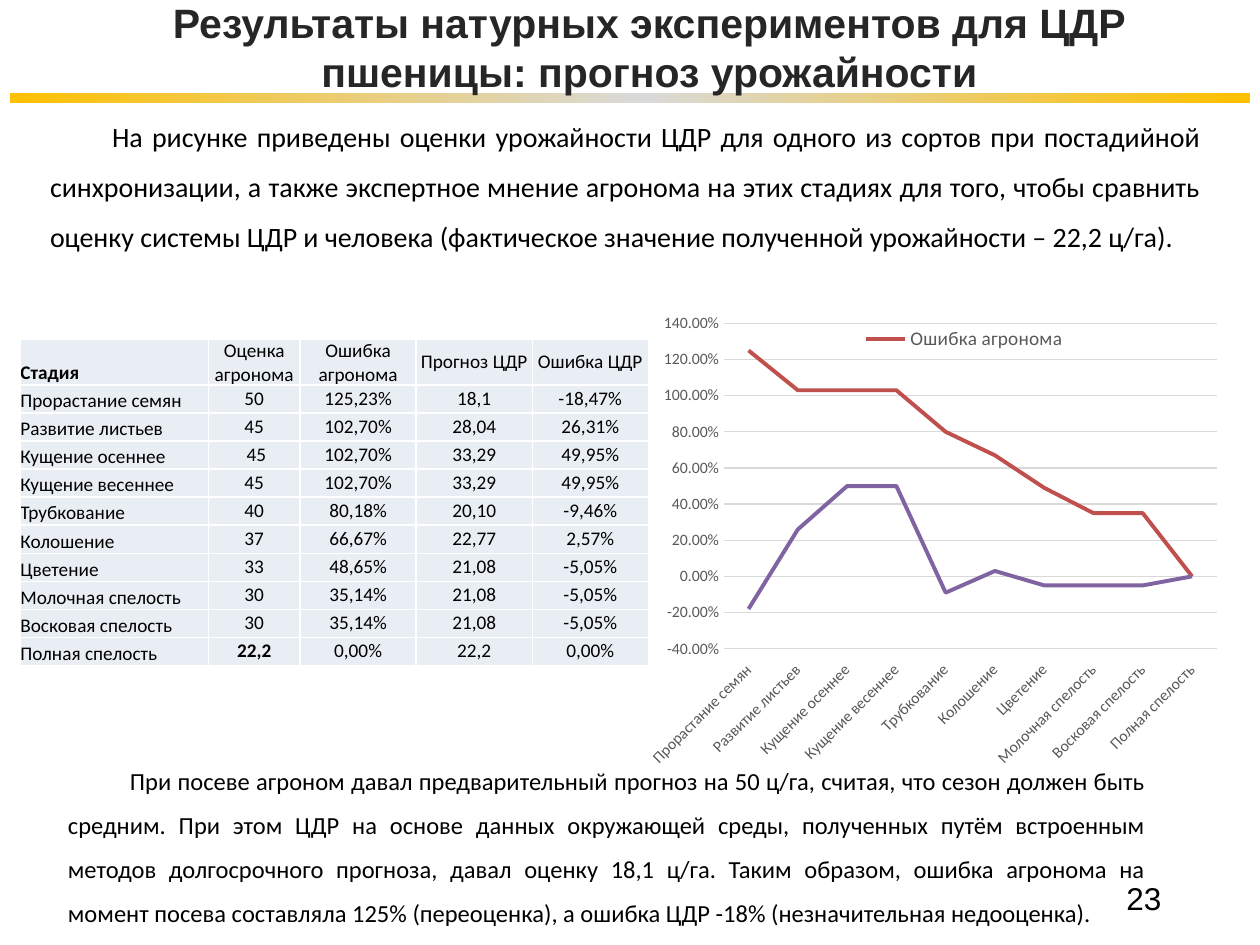
"""Build the slide that compares wheat yield forecasts with the agronomist's estimates."""
from copy import deepcopy
from dataclasses import dataclass

from lxml import etree
from pptx import Presentation
from pptx import util as u
from pptx.chart import data as cd
from pptx.dml.color import RGBColor
from pptx.enum import chart as ch, shapes, text
from pptx.oxml import parse_xml
from pptx.oxml.ns import nsdecls, qn

CENTER, JUSTIFY, LEFT = text.PP_ALIGN.CENTER, text.PP_ALIGN.JUSTIFY, text.PP_ALIGN.LEFT
TOP, MIDDLE, BOTTOM = text.MSO_ANCHOR.TOP, text.MSO_ANCHOR.MIDDLE, text.MSO_ANCHOR.BOTTOM


@dataclass(frozen=True)
class Theme:
    heading: str = "Arial"
    body: str = "Calibri"
    black: str = "000000"
    title: str = "262626"
    label: str = "595959"
    grid: str = "D9D9D9"
    gold: str = "FFC000"
    cell: str = "E9EDF4"
    border: str = "FFFFFF"
    agronomist: str = "C0504D"
    twin: str = "8064A2"
    title_pt: float = 23.4
    number_pt: float = 18
    lead_pt: float = 16
    note_pt: float = 14
    cell_pt: float = 11
    chart_pt: float = 10
    axis_pt: float = 9


HEADER = ["Стадия", "Оценка агронома", "Ошибка агронома", "Прогноз ЦДР", "Ошибка ЦДР"]
STAGES = [
    ["Прорастание семян", "50", "125,23%", "18,1", "-18,47%"],
    ["Развитие листьев", "45", "102,70%", "28,04", "26,31%"],
    ["Кущение осеннее", " 45", "102,70%", "33,29", "49,95%"],
    ["Кущение весеннее", "45", "102,70%", "33,29", "49,95%"],
    ["Трубкование", "40", "80,18%", "20,10", "-9,46%"],
    ["Колошение", "37", "66,67%", "22,77", "2,57%"],
    ["Цветение", "33", "48,65%", "21,08", "-5,05%"],
    ["Молочная спелость", "30", "35,14%", "21,08", "-5,05%"],
    ["Восковая спелость", "30", "35,14%", "21,08", "-5,05%"],
    ["Полная спелость", "22,2", "0,00%", "22,2", "0,00%"],
]
LEAD = (
    "На рисунке приведены оценки урожайности ЦДР для одного из сортов при постадийной "
    "синхронизации, а также экспертное мнение агронома на этих стадиях для того, чтобы сравнить "
    "оценку системы ЦДР и человека (фактическое значение полученной урожайности – 22,2 ц/га)."
)
NOTE = (
    "При посеве агроном давал предварительный прогноз на 50 ц/га, считая, что сезон должен быть "
    "средним. При этом ЦДР на основе данных окружающей среды, полученных путём встроенным "
    "методов долгосрочного прогноза, давал оценку 18,1 ц/га. Таким образом, ошибка агронома на "
    "момент посева составляла 125% (переоценка), а ошибка ЦДР -18% (незначительная недооценка)."
)


def share(label):
    return round(float(label.rstrip("%").replace(",", ".")) / 100, 2)


def place(parent, index, chart_box, box, inner=False):
    for old in parent.findall(qn("c:layout")):
        parent.remove(old)
    target = '<c:layoutTarget val="inner"/>' if inner else ""
    modes = '<c:xMode val="edge"/><c:yMode val="edge"/>'
    sizes = "".join(f'<c:{k} val="{v / full}"/>' for k, v, full in zip("xywh", box, chart_box[2:] * 2))
    parent.insert(index, parse_xml(
        f'<c:layout {nsdecls("c")}><c:manualLayout>{target}{modes}{sizes}</c:manualLayout></c:layout>'))


class Deck:
    def __init__(self, theme, width, height):
        self.t = theme
        self.prs = Presentation()
        self.prs.slide_width, self.prs.slide_height = u.Cm(width), u.Cm(height)
        self.s = self.prs.slides.add_slide(self.prs.slide_layouts[6])

    def font(self, f, size, color, name=None, bold=False):
        f.size, f.name, f.bold = u.Pt(size), name or self.t.body, bold
        f.color.rgb = RGBColor.from_string(color)

    def line(self, ln, color, width):
        ln.color.rgb, ln.width = RGBColor.from_string(color), u.Pt(width)

    def band(self, box, stops):
        sp = self.s.shapes.add_shape(shapes.MSO_SHAPE.RECTANGLE, *map(u.Cm, box))
        sp.shadow.inherit = False
        sp.line.fill.background()
        sp.fill.gradient()
        sp.fill.gradient_angle = 0
        gs = next(sp._element.iter(qn("a:gs")))
        gs.addnext(deepcopy(gs))
        for stop, (position, color) in zip(sp.fill.gradient_stops, stops):
            stop.position, stop.color.rgb = position, RGBColor.from_string(color)

    def text(self, box, words, size, color, name=None, bold=False, align=CENTER, anchor=TOP,
             indent=0, spacing=None):
        tf = self.s.shapes.add_textbox(*map(u.Cm, box)).text_frame
        tf.word_wrap, tf.vertical_anchor = True, anchor
        p = tf.paragraphs[0]
        p.alignment, p.line_spacing = align, spacing
        p._p.get_or_add_pPr().set("indent", str(u.Cm(indent)))
        r = p.add_run()
        r.text = words
        self.font(r.font, size, color, name, bold)

    def essay(self, box, words, size):
        self.text(box, words, size, self.t.black, align=JUSTIFY, indent=1.25, spacing=1.5)

    def cell(self, cell, words, bold, first):
        cell.margin_left = cell.margin_right = cell.margin_top = cell.margin_bottom = 0
        cell.vertical_anchor = BOTTOM if first else MIDDLE
        for side in "LRTB":
            cell._tc.get_or_add_tcPr().append(parse_xml(
                f'<a:ln{side} {nsdecls("a")} w="{u.Pt(1)}"><a:solidFill>'
                f'<a:srgbClr val="{self.t.border}"/></a:solidFill></a:ln{side}>'))
        cell.fill.solid()
        cell.fill.fore_color.rgb = RGBColor.from_string(self.t.cell)
        p = cell.text_frame.paragraphs[0]
        p.alignment = LEFT if first else CENTER
        r = p.add_run()
        r.text = words
        self.font(r.font, self.t.cell_pt, self.t.black, bold=bold)

    def table(self, box, rows, widths, head, bold_cells):
        tbl = self.s.shapes.add_table(len(rows), len(widths), *map(u.Cm, box)).table
        tbl.first_row = tbl.horz_banding = False
        for col, width in zip(tbl.columns, widths):
            col.width = u.Cm(width)
        for i, row in enumerate(rows):
            tbl.rows[i].height = u.Cm((box[3] - head) / (len(rows) - 1) if i else head)
            for j, words in enumerate(row):
                self.cell(tbl.cell(i, j), words, (i, j) in bold_cells, j == 0)

    def chart(self, box, categories, series):
        t = self.t
        data = cd.CategoryChartData(number_format="0.00%")
        data.categories = categories
        for name, values, _ in series:
            data.add_series(name, values)
        chart = self.s.shapes.add_chart(ch.XL_CHART_TYPE.LINE, *map(u.Cm, box), data).chart
        chart.has_title = False
        self.font(chart.font, t.chart_pt, t.black)
        plot = chart.plots[0]
        plot.vary_by_categories = False
        for ser, (_, _, color) in zip(plot.series, series):
            ser.smooth = False
            ser.marker.style = ch.XL_MARKER_STYLE.NONE
            self.line(ser.format.line, color, 2.25)
        for axis in (chart.category_axis, chart.value_axis):
            axis.major_tick_mark = axis.minor_tick_mark = ch.XL_TICK_MARK.NONE
            self.font(axis.tick_labels.font, t.axis_pt, t.label)
        cat, val = chart.category_axis, chart.value_axis
        cat.tick_label_position = ch.XL_TICK_LABEL_POSITION.LOW
        cat._element.find(qn("c:txPr")).find(qn("a:bodyPr")).set("rot", "-2700000")
        self.line(cat.format.line, t.grid, 0.75)
        val.tick_labels.number_format, val.tick_labels.number_format_is_linked = "0.00%", False
        val.format.line.fill.background()
        self.line(val.major_gridlines.format.line, t.grid, 0.75)
        place(chart._chartSpace.chart.plotArea, 0, box, (1.51, 0.42, 9.94, 6.56), inner=True)
        self.legend(chart, box)

    def legend(self, chart, box):
        chart.has_legend = True
        lg = chart.legend
        lg.position, lg.include_in_layout = ch.XL_LEGEND_POSITION.BOTTOM, False
        self.font(lg.font, self.t.cell_pt, self.t.label)
        place(lg._element, 1, box, (4.23, 0.39, 4.25, 0.69))
        entry = etree.Element(qn("c:legendEntry"))
        etree.SubElement(entry, qn("c:idx")).set("val", "1")
        etree.SubElement(entry, qn("c:delete")).set("val", "1")
        lg._element.insert(1, entry)


def main():
    t = Theme()
    d = Deck(t, 25.4, 19.05)
    d.band((0.2, 1.88, 25, 0.2), [(0, t.gold), (0.51, t.grid), (0.99, t.gold)])
    d.text((1.34, -0.33, 23.5, 2.54), "Результаты натурных экспериментов для ЦДР пшеницы: прогноз урожайности",
           t.title_pt, t.title, t.heading, bold=True, anchor=MIDDLE)
    d.text((22.41, 17.6, 1.3, 1.02), "23", t.number_pt, t.black, t.heading)
    stages, _, agronomist, _, twin = zip(*STAGES)
    d.chart((13.08, 6.1, 11.81, 9.86), stages, [
        (HEADER[2], list(map(share, agronomist)), t.agronomist),
        (HEADER[4], list(map(share, twin)), t.twin)])
    d.essay((0.76, 1.94, 23.7, 3.33), LEAD, t.lead_pt)
    d.essay((1.12, 15.02, 22.23, 3.84), NOTE, t.note_pt)
    d.table((0.41, 6.83, 12.67, 6.58), [HEADER] + STAGES, [3.79, 1.85] + [2.34] * 3,
            0.93, {(0, 0), (len(STAGES), 1)})
    d.prs.save("out.pptx")


if __name__ == "__main__":
    main()
